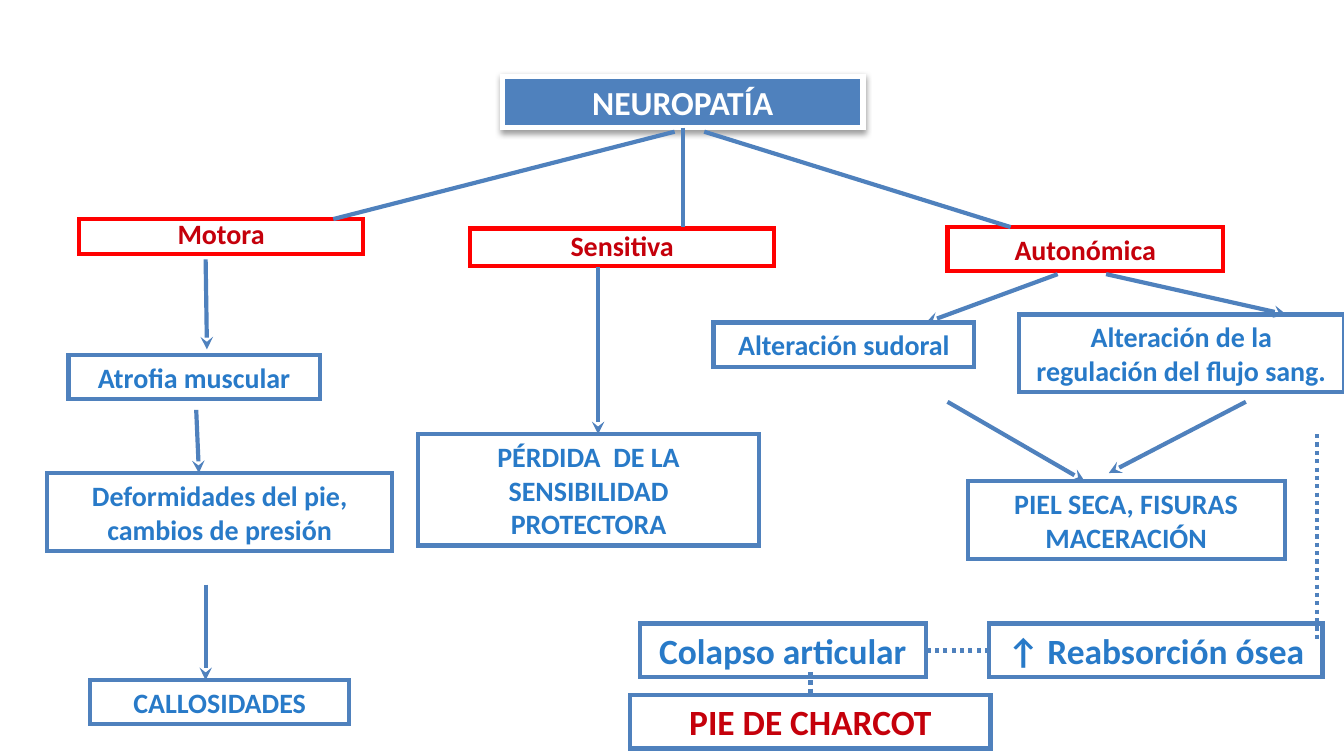
from dataclasses import dataclass
from typing import Any

from lxml import etree
from pptx import Presentation
from pptx.dml.color import RGBColor
from pptx.enum.dml import MSO_LINE_DASH_STYLE as Dash
from pptx.enum.shapes import MSO_CONNECTOR as Connector, MSO_SHAPE as Shape
from pptx.enum.text import MSO_ANCHOR as Anchor, MSO_AUTO_SIZE as AutoSize, PP_ALIGN as Align
from pptx.oxml import parse_xml
from pptx.oxml.ns import nsdecls, qn
from pptx.util import Inches, Pt

COLORS = {"blue": "4F81BD", "text": "287AC8", "red": "FF0000",
          "dark_red": "C5000B", "white": "FFFFFF"}
FONT = "Calibri"
SLIDE_WIDTH = 10
SLIDE_HEIGHT = SLIDE_WIDTH * 9 / 16


def rgb(name):
    return RGBColor.from_string(COLORS[name])


def set_line(shape, color, width=2.25):
    shape.line.color.rgb = rgb(color)
    shape.line.width = Pt(width)


def add_line_detail(shape, tag, **attributes):
    etree.SubElement(shape._element.spPr.find(qn("a:ln")), qn(tag), **attributes)


def write(shape, lines, size, color, spacing=1.0, top=0.04, anchor=Anchor.TOP):
    frame = shape.text_frame
    frame.word_wrap = True
    frame.auto_size = AutoSize.NONE
    frame.vertical_anchor = anchor
    frame.margin_left = frame.margin_right = Inches(0.08)
    frame.margin_top, frame.margin_bottom = Inches(top), Inches(0.04)
    for index, line in enumerate(lines):
        paragraph = frame.add_paragraph() if index else frame.paragraphs[0]
        paragraph.alignment = Align.CENTER
        paragraph.line_spacing = spacing
        run = paragraph.add_run()
        run.text = line
        run.font.name, run.font.size, run.font.bold = FONT, Pt(size), True
        run.font.color.rgb = rgb(color)


@dataclass
class Region:
    """Part of the diagram; its boxes and links are measured from left, top."""
    slide: Any
    left: float
    top: float

    def box(self, x, y, width, height, *lines, size=15, line="blue", color="text", **layout):
        box = self.slide.shapes.add_shape(
            Shape.RECTANGLE, Inches(self.left + x), Inches(self.top + y),
            Inches(width), Inches(height))
        box.shadow.inherit = False
        box.fill.background()
        set_line(box, line)
        add_line_detail(box, "a:miter", lim="800000")
        write(box, lines, size, color, **layout)
        return box

    def link(self, x1, y1, x2, y2, arrow=False, dotted=False):
        link = self.slide.shapes.add_connector(
            Connector.STRAIGHT, Inches(self.left + x1), Inches(self.top + y1),
            Inches(self.left + x2), Inches(self.top + y2))
        set_line(link, "blue")
        if dotted:
            link.line.dash_style = Dash.ROUND_DOT
        if arrow:
            add_line_detail(link, "a:tailEnd", type="stealth")
        etree.SubElement(link._element.spPr, qn("a:effectLst"))
        return link


def add_root(slide, left, top, width, height):
    root = slide.shapes.title
    root.left, root.top = Inches(left), Inches(top)
    root.width, root.height = Inches(width), Inches(height)
    root.fill.solid()
    root.fill.fore_color.rgb = rgb("blue")
    set_line(root, "white", 3)
    add_line_detail(root, "a:miter", lim="800000")
    root._element.spPr.append(parse_xml(
        f'<a:effectLst {nsdecls("a")}><a:outerShdw blurRad="39400" dist="20300" dir="5400000" '
        'rotWithShape="0"><a:srgbClr val="000000"><a:alpha val="38000"/></a:srgbClr>'
        '</a:outerShdw></a:effectLst>'))
    write(root, ["NEUROPATÍA"], 18, "white")
    return root


def add_motor_branch(slide, left, top):
    region = Region(slide, left, top)
    region.box(0.24, 0, 2.11, 0.26, "Motora", line="red", color="dark_red",
               spacing=0.7, top=0.05)
    region.box(0.16, 1.01, 1.87, 0.33, "Atrofia muscular")
    region.box(0, 1.89, 2.57, 0.58, "Deformidades del pie, cambios de presión")
    region.box(0.32, 3.43, 1.93, 0.33, "CALLOSIDADES")
    for ends in [(1.18, 0.3, 1.19, 0.97), (1.11, 1.42, 1.13, 1.89), (1.18, 2.72, 1.18, 3.43)]:
        region.link(*ends, arrow=True)


def add_sensory_branch(slide, left, top):
    region = Region(slide, left, top)
    region.box(0.39, 0, 2.26, 0.28, "Sensitiva", line="red", color="dark_red",
               spacing=0.7, top=0.07, anchor=Anchor.MIDDLE)
    region.box(0, 1.53, 2.54, 0.83, "PÉRDIDA  DE LA SENSIBILIDAD", "PROTECTORA")
    region.link(1.34, 0.29, 1.34, 1.53, arrow=True)


def add_autonomic_branch(slide, left, top):
    region = Region(slide, left, top)
    region.box(1.74, 0, 2.05, 0.33, "Autonómica", line="red", color="dark_red")
    region.box(0, 0.71, 1.94, 0.33, "Alteración sudoral")
    region.box(2.27, 0.65, 2.42, 0.58, "Alteración de la regulación del flujo sang.")
    region.box(1.89, 1.89, 2.36, 0.58, "PIEL SECA, FISURAS", "MACERACIÓN")
    for ends in [(2.56, 0.35, 1.58, 0.71), (2.92, 0.35, 4.26, 0.65),
                 (1.74, 1.3, 2.76, 1.89), (3.96, 1.3, 2.94, 1.83)]:
        region.link(*ends, arrow=True)


def add_charcot_outcome(slide, left, top):
    region = Region(slide, left, top)
    resorption = region.box(2.67, 1.41, 2.48, 0.4, "↑ Reabsorción ósea", size=19)
    collapse = region.box(0.07, 1.41, 2.13, 0.4, "Colapso articular", size=19)
    charcot = region.box(0, 1.94, 2.68, 0.4, "PIE DE CHARCOT", size=19, color="dark_red")
    region.link(5.11, 0, 5.11, 1.53, dotted=True)
    to_charcot = region.link(1.34, 1.77, 1.34, 1.94, dotted=True)
    to_charcot.end_connect(charcot, 0)
    to_collapse = region.link(2.67, 1.6, 2.2, 1.6, dotted=True)
    to_collapse.begin_connect(resorption, 1)
    to_collapse.end_connect(collapse, 3)


def add_root_links(slide, root, left, top):
    region = Region(slide, left, top)
    region.link(2.54, 0, 0, 0.65)
    region.link(2.6, 0, 2.6, 0.71).begin_connect(root, 2)
    region.link(2.76, 0, 5.04, 0.71)


def main():
    deck = Presentation()
    deck.slide_width, deck.slide_height = Inches(SLIDE_WIDTH), Inches(SLIDE_HEIGHT)
    slide = deck.slides.add_slide(deck.slide_layouts[5])
    root = add_root(slide, 3.74, 0.57, 2.68, 0.38)
    add_motor_branch(slide, 0.35, 1.63)
    add_sensory_branch(slide, 3.11, 1.7)
    add_autonomic_branch(slide, 5.31, 1.69)
    add_charcot_outcome(slide, 4.69, 3.23)
    add_root_links(slide, root, 2.48, 0.98)
    deck.save("out.pptx")


if __name__ == "__main__":
    main()
